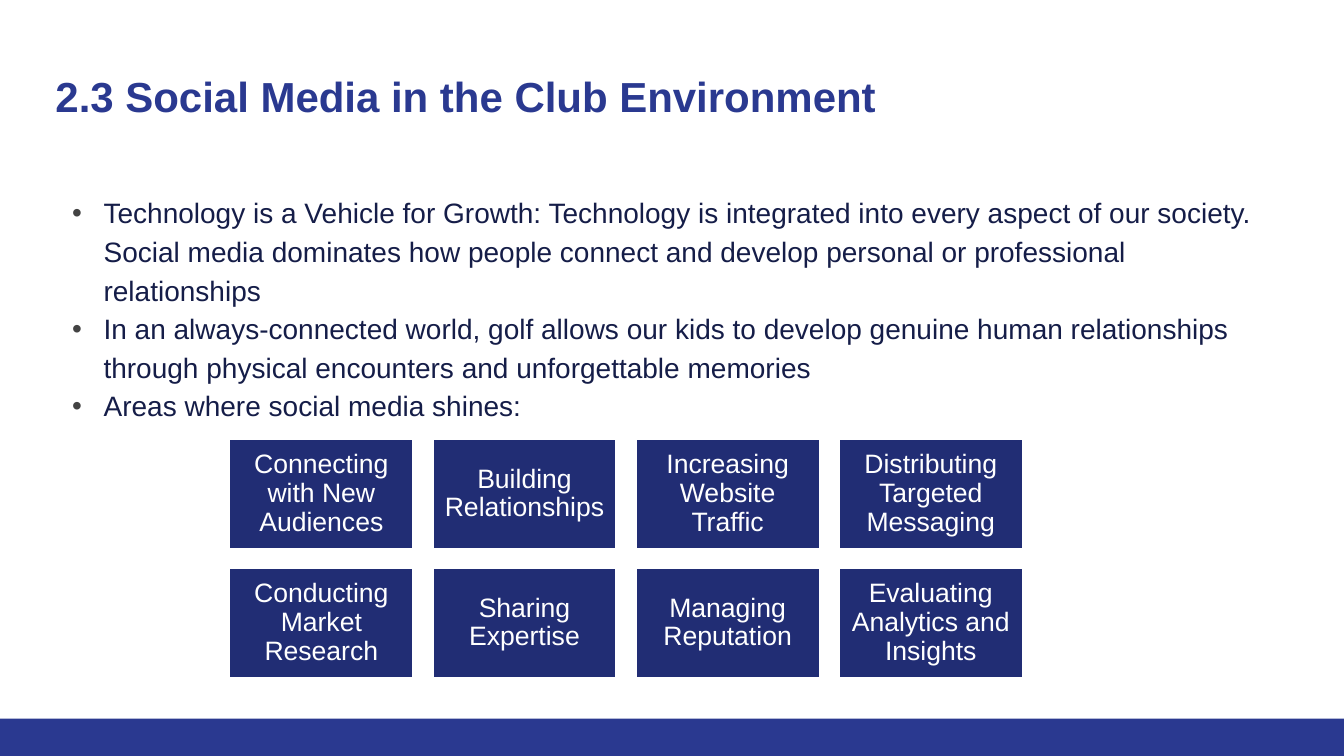
from dataclasses import dataclass

from lxml import etree
from pptx import Presentation
from pptx.dml.color import RGBColor
from pptx.enum.shapes import MSO_SHAPE
from pptx.enum.text import MSO_ANCHOR, MSO_AUTO_SIZE, PP_ALIGN
from pptx.oxml.ns import qn
from pptx.util import Pt

RECTANGLE = MSO_SHAPE.RECTANGLE
TOP, MIDDLE = MSO_ANCHOR.TOP, MSO_ANCHOR.MIDDLE
LEFT, CENTER = PP_ALIGN.LEFT, PP_ALIGN.CENTER
NO_AUTOFIT = MSO_AUTO_SIZE.NONE


@dataclass(frozen=True)
class Theme:
    font: str = "Arial"
    brand: str = "2A3990"
    tile: str = "212D74"
    body: str = "151D48"
    bullet: str = "434343"
    white: str = "FFFFFF"
    title_size: int = 30
    body_size: int = 20
    tile_size: int = 19


THEME = Theme()
SLIDE_WIDTH, SLIDE_HEIGHT = 960, 540
MARGIN, CONTENT_WIDTH = 32.4, 894.24
TITLE = "2.3 Social Media in the Club Environment"
POINTS = [
    "Technology is a Vehicle for Growth: Technology is integrated into every aspect "
    "of our society. Social media dominates how people connect and develop personal "
    "or professional relationships",
    "In an always-connected world, golf allows our kids to develop genuine human "
    "relationships through physical encounters and unforgettable memories",
    "Areas where social media shines:",
]
AREAS = [
    "Connecting with New Audiences",
    "Building Relationships",
    "Increasing Website Traffic",
    "Distributing Targeted Messaging",
    "Conducting Market Research",
    "Sharing Expertise",
    "Managing Reputation",
    "Evaluating Analytics and Insights",
]


def set_frame(frame, inset, anchor):
    frame.word_wrap = True
    frame.auto_size = NO_AUTOFIT
    frame.vertical_anchor = anchor
    frame.margin_left = frame.margin_right = Pt(inset)
    frame.margin_top = frame.margin_bottom = Pt(inset)


def format_paragraph(paragraph, size, color, align=LEFT, spacing=1.0, bold=False):
    paragraph.alignment = align
    paragraph.line_spacing = spacing
    paragraph.space_before = paragraph.space_after = Pt(0)
    for run in paragraph.runs:
        run.font.name = THEME.font
        run.font.size = Pt(size)
        run.font.bold = bold
        run.font.color.rgb = RGBColor.from_string(color)


def add_bullet(paragraph, margin, indent):
    properties = paragraph._p.get_or_add_pPr()
    properties.set("marL", str(Pt(margin)))
    properties.set("indent", str(Pt(indent)))
    bullet_color = etree.SubElement(properties, qn("a:buClr"))
    etree.SubElement(bullet_color, qn("a:srgbClr"), val=THEME.bullet)
    etree.SubElement(properties, qn("a:buFont"), typeface=THEME.font)
    etree.SubElement(properties, qn("a:buChar"), char="•")


def add_block(slide, left, top, width, height, fill):
    block = slide.shapes.add_shape(RECTANGLE, Pt(left), Pt(top), Pt(width), Pt(height))
    block.shadow.inherit = False
    block.fill.solid()
    block.fill.fore_color.rgb = RGBColor.from_string(fill)
    block.line.fill.background()
    return block


def set_title(slide):
    title = slide.shapes.title
    title.left, title.top = Pt(MARGIN), Pt(43.2)
    title.width, title.height = Pt(CONTENT_WIDTH), Pt(64)
    title.text_frame.text = TITLE
    set_frame(title.text_frame, 7.2, TOP)
    format_paragraph(title.text_frame.paragraphs[0], THEME.title_size, THEME.brand,
                     bold=True)


def add_points(slide):
    box = slide.shapes.add_textbox(Pt(MARGIN), Pt(129), Pt(CONTENT_WIDTH), Pt(368))
    frame = box.text_frame
    set_frame(frame, 7.2, TOP)
    frame.text = "\n".join(POINTS)
    for paragraph in frame.paragraphs:
        format_paragraph(paragraph, THEME.body_size, THEME.body, spacing=1.15)
        add_bullet(paragraph, 34.5, -22.5)


def add_area_tiles(slide):
    left, top, width, height, gap, columns = 163.6, 313.2, 131.9, 79.1, 13.2, 4
    for index, area in enumerate(AREAS):
        row, column = divmod(index, columns)
        tile = add_block(slide, left + column * (width + gap),
                         top + row * (height + gap), width, height, THEME.tile)
        tile.line.color.rgb = RGBColor.from_string(THEME.white)
        tile.line.width = Pt(2)
        tile.text_frame.text = area
        set_frame(tile.text_frame, 5.7, MIDDLE)
        format_paragraph(tile.text_frame.paragraphs[0], THEME.tile_size, THEME.white,
                         align=CENTER, spacing=0.9)


def main():
    presentation = Presentation()
    presentation.slide_width = Pt(SLIDE_WIDTH)
    presentation.slide_height = Pt(SLIDE_HEIGHT)
    slide = presentation.slides.add_slide(presentation.slide_layouts.get_by_name("Title Only"))
    footer_top = 513.4
    add_block(slide, 0, footer_top, SLIDE_WIDTH, SLIDE_HEIGHT - footer_top, THEME.brand)
    set_title(slide)
    add_points(slide)
    add_area_tiles(slide)
    presentation.save("out.pptx")


if __name__ == "__main__":
    main()
